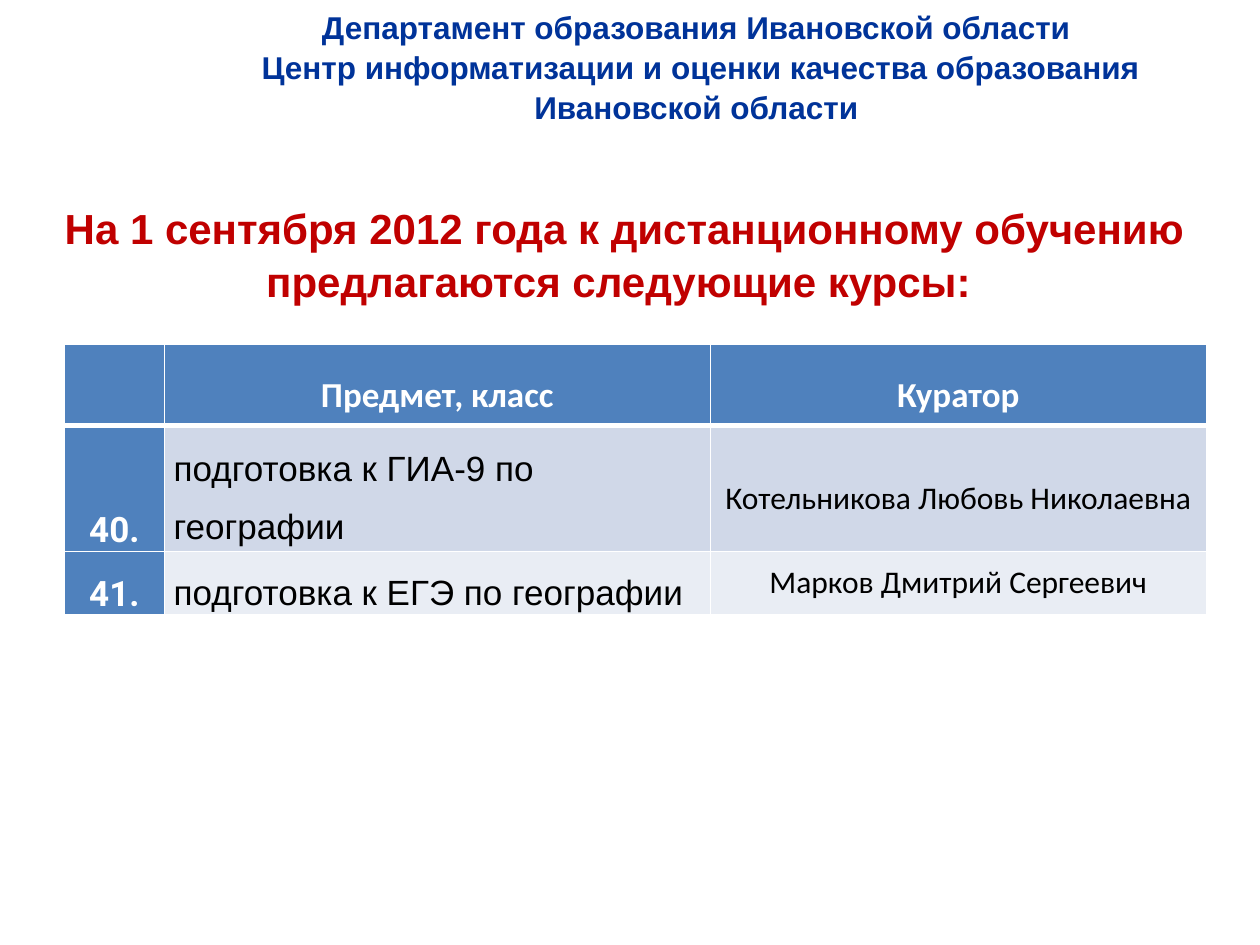
from dataclasses import dataclass

from lxml.etree import SubElement
from pptx import Presentation
from pptx.dml.color import RGBColor
from pptx.enum.text import MSO_ANCHOR, PP_ALIGN
from pptx.oxml.ns import qn
from pptx.util import Pt


@dataclass(frozen=True)
class Theme:
    navy: str = "003399"
    red: str = "C00000"
    blue: str = "4F81BD"
    band_dark: str = "D0D8E8"
    band_light: str = "E9EDF4"
    white: str = "FFFFFF"
    black: str = "000000"
    title: int = 24
    body: int = 20
    small: int = 18
    thin: int = 1
    thick: int = 3


T = Theme()


@dataclass(frozen=True)
class Style:
    font: str
    size: int
    color: str
    bold: bool = False
    align: PP_ALIGN = PP_ALIGN.CENTER
    spacing: float = 1.5
    anchor: MSO_ANCHOR = MSO_ANCHOR.MIDDLE
    inset: float = 2.7


@dataclass(frozen=True)
class Course:
    number: str
    subject: str
    curator: str
    band: str
    curator_spacing: float


ORGANISATION = Style("Arial", T.small, T.navy, True, spacing=1.06)
HEADLINE = Style("Arial", T.title, T.red, True, spacing=1.06)
COLUMN_HEAD = Style("Calibri", T.body, T.white, True)
NUMBER = Style("Roboto", T.body, T.white, True, anchor=MSO_ANCHOR.BOTTOM)
SUBJECT = Style("Arial", T.body, T.black, align=PP_ALIGN.LEFT, inset=5.4)

COURSES = [
    Course("40.", "подготовка к ГИА-9 по географии",
           "Котельникова Любовь Николаевна", T.band_dark, 1.5),
    Course("41.", "подготовка к ЕГЭ по географии",
           "Марков Дмитрий Сергеевич", T.band_light, 1.0),
]


def add_text(p, text: str, style: Style) -> None:
    p.alignment = style.align
    p.line_spacing = style.spacing
    r = p.add_run()
    r.text = text
    r.font.name = style.font
    r.font.size = Pt(style.size)
    r.font.bold = style.bold
    r.font.color.rgb = RGBColor.from_string(style.color)


def add_box(s, left: float, top: float, width: float, height: float,
            lines: list[str], style: Style) -> None:
    tf = s.shapes.add_textbox(Pt(left), Pt(top), Pt(width), Pt(height)).text_frame
    tf.word_wrap = True
    for i, line in enumerate(lines):
        add_text(tf.add_paragraph() if i else tf.paragraphs[0], line, style)


def set_borders(cell, top: int, bottom: int) -> None:
    tc_pr = cell._tc.get_or_add_tcPr()
    widths = {"a:lnL": T.thin, "a:lnR": T.thin, "a:lnT": top, "a:lnB": bottom}
    for i, (tag, width) in enumerate(widths.items()):
        ln = SubElement(tc_pr, qn(tag), w=str(Pt(width)))
        fill = SubElement(ln, qn("a:solidFill"))
        SubElement(fill, qn("a:srgbClr"), val=T.white)
        tc_pr.insert(i, ln)  # borders precede the fill


def fill_cell(cell, text: str, style: Style, fill: str, row: int) -> None:
    cell.fill.solid()
    cell.fill.fore_color.rgb = RGBColor.from_string(fill)
    cell.vertical_anchor = style.anchor
    cell.margin_left = cell.margin_right = Pt(style.inset)
    cell.margin_top = cell.margin_bottom = 0
    set_borders(cell, T.thick if row == 1 else T.thin,
                T.thick if row == 0 else T.thin)
    if text:
        add_text(cell.text_frame.paragraphs[0], text, style)


def add_courses(s) -> None:
    widths, heights = [57, 312, 283.5], [46.5, 67.5, 28.8]
    table = s.shapes.add_table(len(heights), len(widths), Pt(36.9), Pt(196.7),
                               Pt(sum(widths)), Pt(sum(heights))).table
    for column, width in zip(table.columns, widths):
        column.width = Pt(width)
    for row, height in zip(table.rows, heights):
        row.height = Pt(height)

    # Header row
    for col, text in enumerate(["", "Предмет, класс", "Куратор"]):
        fill_cell(table.cell(0, col), text, COLUMN_HEAD, T.blue, 0)

    # Course rows
    for row, course in enumerate(COURSES, 1):
        curator = Style("Calibri", T.small, T.black, spacing=course.curator_spacing)
        fill_cell(table.cell(row, 0), course.number, NUMBER, T.blue, row)
        fill_cell(table.cell(row, 1), course.subject, SUBJECT, course.band, row)
        fill_cell(table.cell(row, 2), course.curator, curator, course.band, row)


def main() -> None:
    prs = Presentation()
    prs.slide_width, prs.slide_height = Pt(720), Pt(540)
    s = prs.slides.add_slide(prs.slide_layouts[6])

    # Organisation and headline
    add_box(s, 117.4, 0, 560.9, 98.6,
            ["Департамент образования Ивановской области",
             " Центр информатизации и оценки качества образования Ивановской области"],
            ORGANISATION)
    add_box(s, 25.2, 110.2, 663.1, 65.5,
            ["На 1 сентября 2012 года к дистанционному обучению "
             "предлагаются следующие курсы: "], HEADLINE)

    # Course table
    add_courses(s)
    prs.save("out.pptx")


if __name__ == "__main__":
    main()
